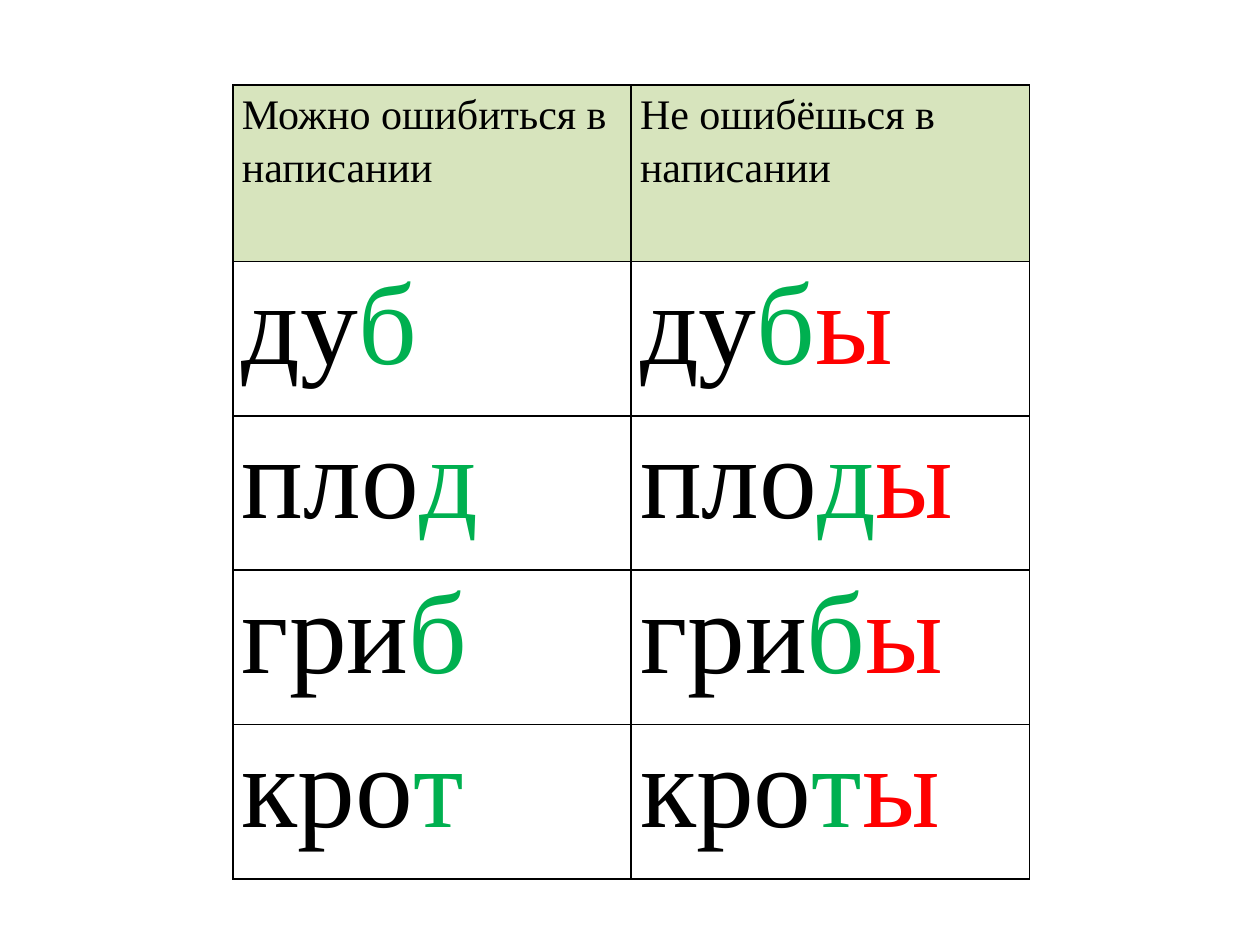
from lxml.etree import SubElement as Sub
from pptx import Presentation
from pptx.dml.color import RGBColor
from pptx.oxml.ns import qn
from pptx.util import Inches, Pt

BLACK, GREEN, RED, PALE = "000000", "00B050", "FF0000", "D7E4BD"
HEADS = ["Можно ошибиться в написании", "Не ошибёшься в написании"]
WORDS = ["дуб", "плод", "гриб", "крот"]
ENDING = "ы"


def color(code):
    return RGBColor.from_string(code)


class Deck:
    def __init__(self, wide, high, font):
        self.prs = Presentation()
        self.prs.slide_width, self.prs.slide_height = Inches(wide), Inches(high)
        self.slide = self.prs.slides.add_slide(self.prs.slide_layouts[6])
        self.font = font

    def table(self, left, top, wide, high, rows, cols, head):
        """Add a bare table; lengths are shares of the slide, head a share of the table."""
        w, h = self.prs.slide_width, self.prs.slide_height
        box = [round(n) for n in (left * w, top * h, wide * w, high * h)]
        table = self.slide.shapes.add_table(rows, cols, *box).table
        table.first_row = table.horz_banding = False
        first = round(box[3] * head)
        for i, row in enumerate(table.rows):
            row.height = (box[3] - first) // (rows - 1) if i else first
        return table

    def border(self, cell):
        props = cell._tc.get_or_add_tcPr()
        for side in ("lnL", "lnR", "lnT", "lnB"):
            line = Sub(props, qn("a:" + side), w=str(Pt(1)))
            Sub(Sub(line, qn("a:solidFill")), qn("a:srgbClr"), val=BLACK)

    def cell(self, cell, parts, size, space=1.0, fill=None):
        """Fill a cell with (text, colour) parts."""
        cell.margin_left = cell.margin_right = Inches(0.07)
        cell.margin_top = cell.margin_bottom = 0
        self.border(cell)
        if fill:
            cell.fill.solid()
            cell.fill.fore_color.rgb = color(fill)
        else:
            cell.fill.background()
        para = cell.text_frame.paragraphs[0]
        para.line_spacing = space
        for text, code in parts:
            run = para.add_run()
            run.text = text
            run.font.name, run.font.size = self.font, Pt(size)
            run.font.color.rgb = color(code)


def main():
    deck = Deck(10, 7.5, "Times New Roman")
    table = deck.table(0.185, 0.09, 0.632, 0.84, len(WORDS) + 1, len(HEADS), 2 / 9)
    for col, head in enumerate(HEADS):
        deck.cell(table.cell(0, col), [(head, BLACK)], 24, 1.15, PALE)
    for row, word in enumerate(WORDS, 1):
        single = [(word[:-1], BLACK), (word[-1], GREEN)]
        plural = single + [(ENDING, RED)]
        for col, parts in enumerate((single, plural)):
            deck.cell(table.cell(row, col), parts, 66)
    deck.prs.save("out.pptx")


if __name__ == "__main__":
    main()
